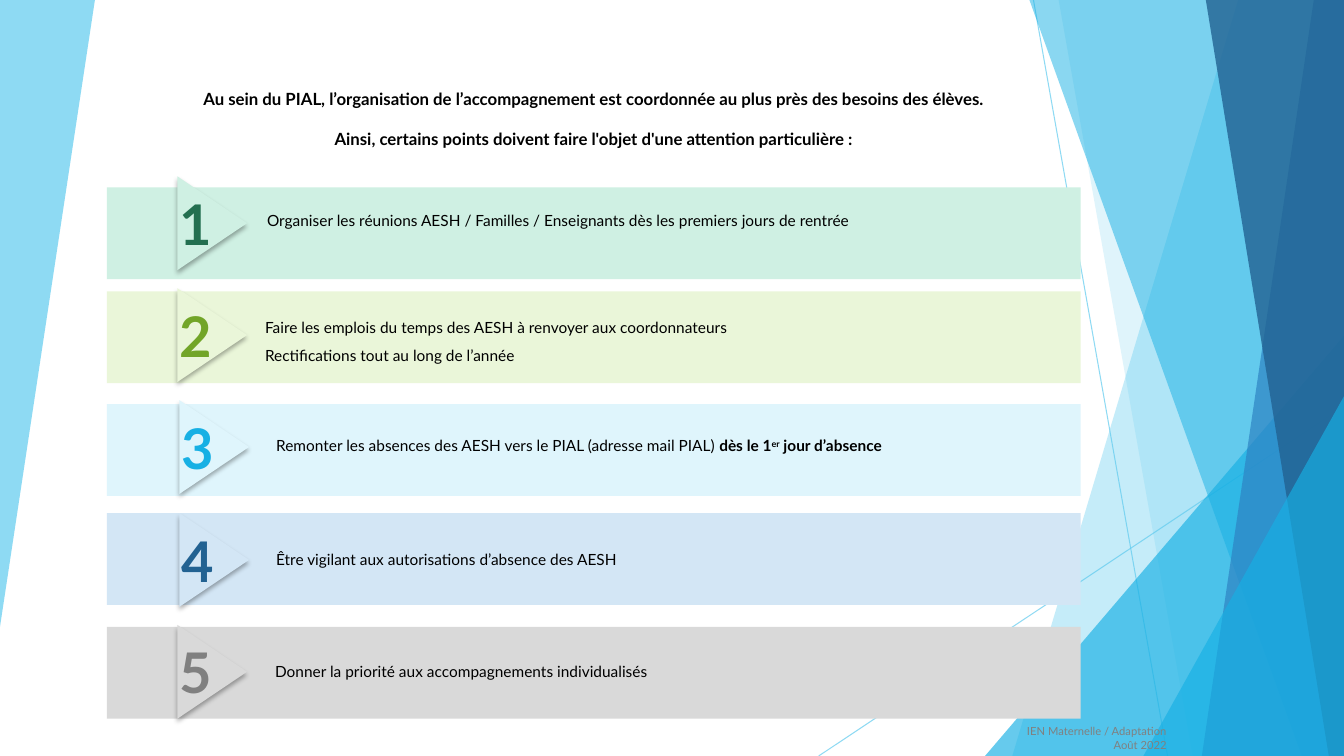
from lxml import etree
from pptx import Presentation
from pptx.dml.color import RGBColor
from pptx.enum.shapes import MSO_CONNECTOR, MSO_SHAPE
from pptx.enum.text import MSO_ANCHOR, MSO_AUTO_SIZE, PP_ALIGN
from pptx.oxml.ns import qn
from pptx.util import Inches, Pt

TRIANGLE, RECTANGLE = MSO_SHAPE.ISOSCELES_TRIANGLE, MSO_SHAPE.RECTANGLE
STRAIGHT = MSO_CONNECTOR.STRAIGHT
LEFT, CENTER, RIGHT = PP_ALIGN.LEFT, PP_ALIGN.CENTER, PP_ALIGN.RIGHT
TOP = MSO_ANCHOR.TOP
NO_FIT = MSO_AUTO_SIZE.NONE

BLACK = RGBColor(0x00, 0x00, 0x00)
GREY = RGBColor(0x80, 0x80, 0x80)
PALE_GREY = RGBColor(0xD9, 0xD9, 0xD9)
SKY = RGBColor(0x5F, 0xCB, 0xEF)
CYAN = RGBColor(0x17, 0xB0, 0xE4)
PALE_CYAN = RGBColor(0xDF, 0xF5, 0xFC)
BLUE = RGBColor(0x2E, 0x83, 0xC3)
NAVY = RGBColor(0x22, 0x62, 0x92)
PALE_BLUE = RGBColor(0xD3, 0xE6, 0xF5)
GREEN = RGBColor(0x23, 0x6F, 0x50)
PALE_GREEN = RGBColor(0xCF, 0xF0, 0xE3)
LIME = RGBColor(0x72, 0xA5, 0x28)
PALE_LIME = RGBColor(0xEA, 0xF6, 0xD9)


def write(p, text, size=11, color=BLACK, bold=False, baseline=0,
          align=LEFT, spacing=1.0, before=0):
    p.alignment = align
    p.line_spacing = spacing
    p.space_before = Pt(before)
    r = p.add_run()
    r.text = text
    r.font.name = "Lato"
    r.font.size = Pt(size)
    r.font.bold = bold
    r.font.color.rgb = color
    if baseline:
        r.font._element.set("baseline", str(baseline * 1000))


def paint(sp, fill, color, opacity=100):
    fill.solid()
    fill.fore_color.rgb = color
    if opacity < 100:
        srgb = sp.element.spPr.find(".//" + qn("a:srgbClr"))
        etree.SubElement(srgb, qn("a:alpha"), val=str(opacity * 1000))


prs = Presentation()
prs.slide_width, prs.slide_height = Inches(13.33), Inches(7.5)
s = prs.slides.add_slide(prs.slide_layouts[5])
shapes = s.shapes

facets = [
    ([(0, 0), (0.94, 0), (0.94, 0.01), (0, 6.22)], SKY, 70),
    ([(12.28, 0), (13.33, 0), (13.33, 7.5), (10.04, 7.5)], SKY, 36),
    ([(10.5, 0), (13.33, 0), (13.33, 7.5), (11.83, 7.5)], SKY, 20),
    ([(13.33, 3.33), (13.33, 7.5), (9.77, 7.5)], CYAN, 66),
    ([(10.21, 0), (13.33, 0), (13.33, 7.5), (12.91, 7.5)], CYAN, 50),
    ([(13.03, 0), (13.33, 0), (13.33, 7.5), (11.92, 7.5)], BLUE, 70),
    ([(11.96, 0), (13.33, 0), (13.33, 7.5), (13.18, 7.5)], NAVY, 80),
    ([(13.33, 3.93), (13.33, 7.5), (11.34, 7.5)], CYAN, 66),
]
rays = [(10.25, 0, 11.58, 7.5), (13.33, 4.03, 8.12, 7.5)]

for ray in rays:
    sp = shapes.add_connector(STRAIGHT, *[Inches(v) for v in ray])
    paint(sp, sp.line.fill, SKY, 70)
    sp.line.width = Pt(0.75)
    etree.SubElement(sp.element.spPr, qn("a:effectLst"))

for points, color, opacity in facets:
    corners = [(Inches(x), Inches(y)) for x, y in points]
    builder = shapes.build_freeform(*corners[0])
    builder.add_line_segments(corners[1:], close=True)
    sp = builder.convert_to_shape()
    paint(sp, sp.fill, color, opacity)
    sp.line.fill.background()
    sp.shadow.inherit = False

title = shapes.title
title.left, title.top = Inches(0.12), Inches(0.83)
title.width, title.height = Inches(11.54), Inches(0.91)
tf = title.text_frame
tf.word_wrap, tf.auto_size, tf.vertical_anchor = True, NO_FIT, TOP
write(tf.paragraphs[0], "Au sein du PIAL, l’organisation de l’accompagnement est "
      "coordonnée au plus près des besoins des élèves.",
      size=12, bold=True, align=CENTER)
write(tf.add_paragraph(), "Ainsi, certains points doivent faire l'objet d'une "
      "attention particulière :", size=12, bold=True, align=CENTER, before=14.4)

rows = [
    (1.86, PALE_GREEN, GREEN, 1.64, 1.87, 2.55, 2.04, 1.0,
     [[("Organiser les réunions AESH / Familles / Enseignants dès les premiers "
        "jours de rentrée", {})]]),
    (2.89, PALE_LIME, LIME, 1.64, 2.98, 2.53, 3.02, 1.5,
     [[("Faire les emplois du temps des AESH à renvoyer aux coordonnateurs", {})],
      [("Rectifications tout au long de l’année", {})]]),
    (4.01, PALE_CYAN, CYAN, 1.66, 4.09, 2.64, 4.28, 1.0,
     [[("Remonter les absences des AESH vers le PIAL (adresse mail PIAL) ", {}),
       ("dès le 1", {"bold": True}),
       ("er", {"bold": True, "baseline": 30}),
       (" jour d’absence", {"bold": True})]]),
    (5.09, PALE_BLUE, NAVY, 1.66, 5.21, 2.64, 5.41, 1.0,
     [[("Être vigilant aux autorisations d’absence des AESH", {})]]),
    (6.22, PALE_GREY, GREY, 1.64, 6.32, 2.63, 6.52, 1.0,
     [[("Donner la priorité aux accompagnements individualisés", {})]]),
]

for number, row in enumerate(rows, 1):
    bar_y, pale, dark, tri_x, tri_y, text_x, text_y, spacing, lines = row
    bar = shapes.add_shape(RECTANGLE, Inches(1.06), Inches(bar_y),
                           Inches(9.66), Inches(0.91))
    arrow = shapes.add_shape(TRIANGLE, Inches(tri_x), Inches(tri_y),
                             Inches(0.93), Inches(0.69))
    arrow.rotation = 90
    for sp in (bar, arrow):
        paint(sp, sp.fill, pale)
        sp.line.fill.background()
        sp.shadow.inherit = False
    effects = arrow.element.spPr.find(qn("a:effectLst"))
    shadow = etree.SubElement(effects, qn("a:outerShdw"), blurRad=str(Pt(3.5)),
                              dist=str(Pt(2.2)), dir="5400000", rotWithShape="1")
    tint = etree.SubElement(shadow, qn("a:srgbClr"), val=str(BLACK))
    etree.SubElement(tint, qn("a:alpha"), val="32000")

    label = shapes.add_textbox(Inches(tri_x - 0.28), Inches(tri_y - 0.04),
                               Inches(1.17), Inches(0.77))
    label.text_frame.word_wrap = True
    write(label.text_frame.paragraphs[0], str(number), size=40, color=dark,
          bold=True, align=CENTER)

    box = shapes.add_textbox(Inches(text_x), Inches(text_y), Inches(8.61),
                             Inches(0.29 if len(lines) == 1 else 0.66))
    tf = box.text_frame
    tf.word_wrap = True
    for i, line in enumerate(lines):
        p = tf.add_paragraph() if i else tf.paragraphs[0]
        for text, style in line:
            write(p, text, spacing=spacing, **style)

footer = shapes.add_textbox(Inches(9.76), Inches(7.14), Inches(1.91), Inches(0.37))
tf = footer.text_frame
tf.word_wrap = True
write(tf.paragraphs[0], "IEN Maternelle / Adaptation", size=8, color=GREY, align=RIGHT)
write(tf.add_paragraph(), "Août 2022", size=8, color=GREY, align=RIGHT)

prs.save("out.pptx")
